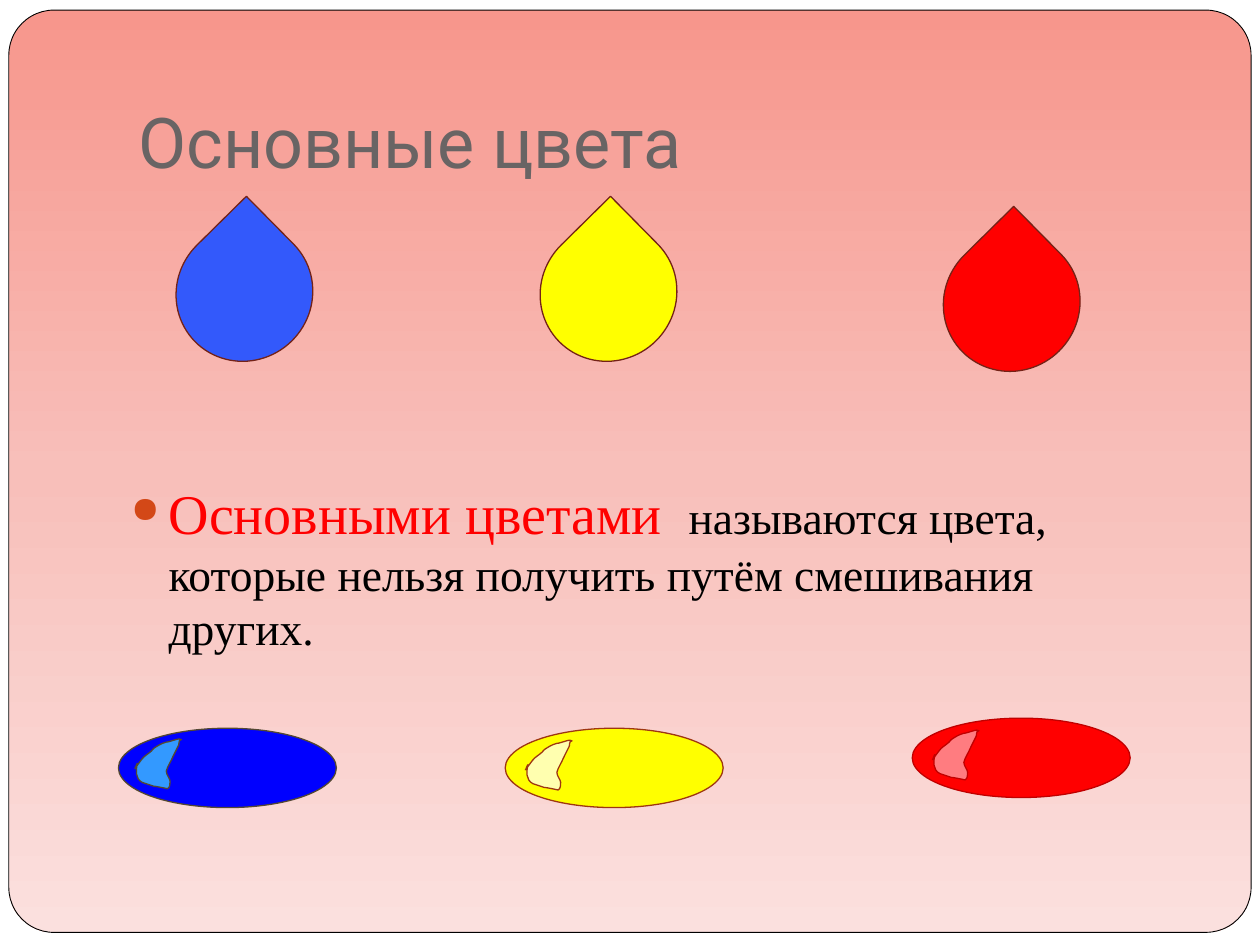
from copy import deepcopy

from lxml import etree
from pptx import Presentation
from pptx.dml.color import RGBColor
from pptx.enum.shapes import MSO_SHAPE
from pptx.enum.text import MSO_ANCHOR
from pptx.oxml.ns import qn
from pptx.util import Inches, Pt

ROUNDED = MSO_SHAPE.ROUNDED_RECTANGLE
TEARDROP = MSO_SHAPE.TEAR
OVAL = MSO_SHAPE.OVAL
BOTTOM = MSO_ANCHOR.BOTTOM

COLORS = {
    "white": "FFFFFF", "black": "000000", "title": "696464", "bullet": "D34817",
    "top": "F7968C", "middle": "F8BFBA", "bottom": "FBE0DE",
    "drop_blue": "3359FB", "drop_line": "742217",
    "blue": "0000FF", "blue_line": "534733", "blue_shine": "3399FF",
    "yellow": "FFFF00", "yellow_line": "9E3611", "yellow_shine": "FFFFCC",
    "red": "FF0000", "red_line": "C00000", "red_shine": "FF7C80",
}


def rgb(name):
    return RGBColor.from_string(COLORS[name])


def paint(shape, fill, line, width=0.75):
    shape.shadow.inherit = False
    if fill:
        shape.fill.solid()
        shape.fill.fore_color.rgb = rgb(fill)
    shape.line.color.rgb = rgb(line)
    shape.line.width = Pt(width)


deck = Presentation()
deck.slide_width, deck.slide_height = Inches(10), Inches(7.5)
page = deck.slides.add_slide(deck.slide_layouts[6])
page.background.fill.solid()
page.background.fill.fore_color.rgb = rgb("white")

# Rounded panel with a three-stop vertical gradient
panel = page.shapes.add_shape(ROUNDED, Inches(0.07), Inches(0.08), Inches(9.86), Inches(7.32))
panel.adjustments[0] = 0.049
paint(panel, None, "black", 0.5)
panel.fill.gradient()
panel.fill.gradient_angle = 270
stop_list = panel.element.spPr.find(".//" + qn("a:gsLst"))
stop_list.append(deepcopy(stop_list[-1]))
for stop, name, position in zip(panel.fill.gradient_stops, ("top", "middle", "bottom"), (0, 0.5, 1)):
    stop.color.rgb = rgb(name)
    stop.position = position

# Title
box = page.shapes.add_textbox(Inches(1), Inches(0.3), Inches(8.5), Inches(1.25))
box.text_frame.word_wrap = True
box.text_frame.vertical_anchor = BOTTOM
box.text_frame.margin_bottom = Inches(0.1)
para = box.text_frame.paragraphs[0]
para.text = "Основные цвета"
para.font.name = "Roboto"
para.font.size = Pt(40)
para.font.color.rgb = rgb("title")

# Definition with a round bullet
box = page.shapes.add_textbox(Inches(0.94), Inches(3.75), Inches(8.5), Inches(1.62))
box.text_frame.word_wrap = True
para = box.text_frame.paragraphs[0]
properties = para._p.get_or_add_pPr()
properties.set("marL", str(Inches(0.3)))
properties.set("indent", str(-Inches(0.3)))
bullet_color = etree.SubElement(properties, qn("a:buClr"))
etree.SubElement(bullet_color, qn("a:srgbClr"), val=COLORS["bullet"])
etree.SubElement(properties, qn("a:buSzPct"), val="65000")
etree.SubElement(properties, qn("a:buChar"), char="●")
para.font.name = "Times New Roman"
for text, size, color in (
    ("Основными цветами ", 32, "red"),
    (" ", 28, "red"),
    ("называются цвета, которые нельзя получить путём смешивания других.", 26, "black"),
):
    span = para.add_run()
    span.text = text
    span.font.size = Pt(size)
    span.font.color.rgb = rgb(color)

# Paint drops
for left, top, fill in ((1.39, 1.79, "drop_blue"), (4.28, 1.79, "yellow"), (7.48, 1.87, "red")):
    drop = page.shapes.add_shape(TEARDROP, Inches(left), Inches(top), Inches(1.1), Inches(1.07))
    drop.rotation = 315.4
    paint(drop, fill, "drop_line")

# Outline of a highlight: Bezier segments in hundredths of an inch
SHINE_SIZE = (37, 41)
SHINE_START = (25, 4)
SHINE_CURVES = (
    ((21, 5), (18, 7), (15, 9)),
    ((13, 12), (9, 14), (7, 16)),
    ((5, 18), (1, 24), (0, 25)),
    ((0, 26), (2, 20), (2, 21)),
    ((1, 26), (0, 33), (6, 36)),
    ((9, 37), (12, 38), (15, 39)),
    ((17, 39), (26, 41), (26, 41)),
    ((28, 40), (28, 37), (28, 35)),
    ((28, 33), (25, 30), (25, 27)),
    ((26, 23), (29, 19), (30, 16)),
    ((32, 12), (33, 10), (34, 8)),
    ((36, 6), (34, 2), (37, 2)),
    ((36, 0), (28, 4), SHINE_START),
)

# Puddles of paint, each grouped with its highlight
for color, left, top, shine_left, shine_top in (
    ("blue", 0.94, 5.78, 1.07, 5.85),
    ("yellow", 4.01, 5.78, 4.17, 5.86),
    ("red", 7.24, 5.7, 7.4, 5.78),
):
    group = page.shapes.add_group_shape()
    puddle = group.shapes.add_shape(OVAL, Inches(left), Inches(top), Inches(1.73), Inches(0.63))
    paint(puddle, color, color + "_line")

    # The builder sets the frame; its line is then exchanged for curves
    builder = group.shapes.build_freeform(0, 0, scale=Inches(0.01))
    builder.add_line_segments([SHINE_SIZE])
    shine = builder.convert_to_shape(Inches(shine_left), Inches(shine_top))
    outline = shine.element.spPr.find(".//" + qn("a:pathLst"))[0]
    for segment in list(outline):
        outline.remove(segment)
    for tag, points in [("a:moveTo", (SHINE_START,))] + [("a:cubicBezTo", c) for c in SHINE_CURVES]:
        segment = etree.SubElement(outline, qn(tag))
        for x, y in points:
            etree.SubElement(segment, qn("a:pt"), x=str(x), y=str(y))
    etree.SubElement(outline, qn("a:close"))

    paint(shine, color + "_shine", color + "_line")
    if color == "yellow":
        shine_fill = shine.element.spPr.find(qn("a:solidFill"))
        etree.SubElement(shine_fill[0], qn("a:alpha"), val="86000")

deck.save("out.pptx")
